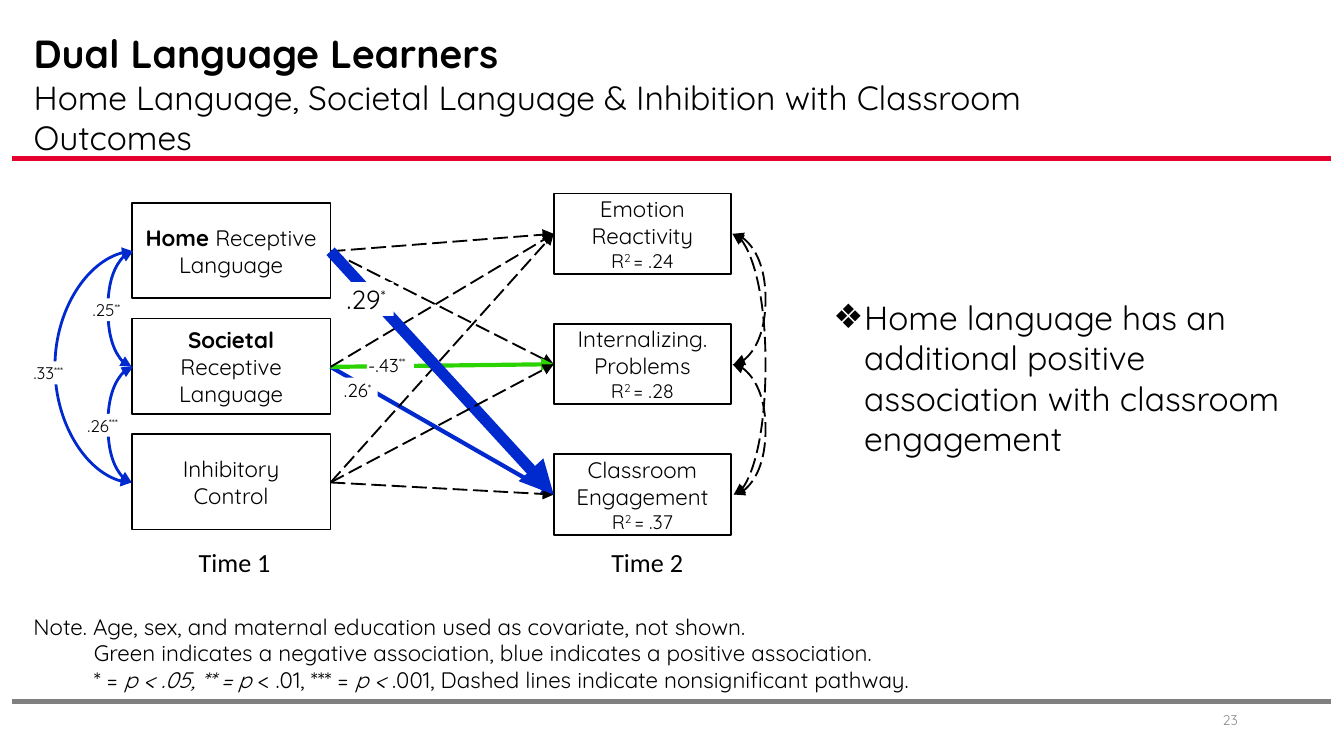
from pptx import Presentation, util as u
from pptx.dml.color import RGBColor
from pptx.enum import dml, shapes, text
from pptx.oxml.ns import qn
from lxml import etree

PX = 9144  # 100 px to the inch
FONT = "Quicksand"
INK = {"black": "000000", "white": "FFFFFF", "red": "E6002E", "gray": "808080",
       "pale": "8C8C8C", "blue": "0029CE", "green": "2BD300"}
LEFT = [187 + 86 * i for i in range(3)]
RIGHT = [174 + 97 * i for i in range(3)]
EDGE = {"in": 98, "out": 246, "to": 412, "end": 545}
CAUSES = [
    [("Home", "b"), (" Receptive Language", "")],
    [("Societal", "b"), (" Receptive Language", "")],
    [("Inhibitory Control", "")],
]
RESULTS = [("Emotion Reactivity", ".24"), ("Internalizing. Problems", ".28"),
           ("Classroom Engagement", ".37")]
# cause, result, colour, width, dashed
PATHS = [
    (1, 2, "blue", 2.25, False), (2, 2, "black", 1, True),
    (2, 0, "black", 1, True), (0, 0, "black", 1, True),
    (0, 1, "black", 1, True), (1, 1, "green", 2.25, False),
    (1, 0, "black", 1, True), (0, 2, "blue", 6, False),
    (2, 1, "black", 1, True),
]
# value, stars, size, place
LABELS = [
    (".33", "***", 9, (24, 269, 31, 17)), (".26", "***", 9, (64, 308, 31, 17)),
    (".25", "**", 9, (68, 222, 28, 17)), (".26", "*", 10, (255, 281, 26, 19)),
    (".29", "*", 14, (257, 210, 36, 25)), ("-.43", "**", 10, (273, 262, 35, 19)),
]
NOTE = [
    [("Note. Age, sex, and maternal education used as covariate, not shown.", "")],
    [("Green indicates a negative association, blue indicates a positive association.", "")],
    [("* = ", ""), ("p < .05, ** = p", "i"), (" < .01, *** = ", ""), ("p <", "i"),
     (" .001, Dashed lines indicate nonsignificant pathway.", "")],
]


def rgb(name):
    return RGBColor.from_string(INK[name])


def emu(*nums):
    return [n * PX for n in nums]


def place(shape, box):
    shape.left, shape.top, shape.width, shape.height = emu(*box)


def write(para, runs, size, color="black", font=FONT, align=text.PP_ALIGN.LEFT):
    """Fill a paragraph with (words, style) runs; style is b, i, sup or empty."""
    para.alignment = align
    para.space_before = u.Pt(0)
    para.font.size, para.font.name = u.Pt(size), font
    para.font.color.rgb = rgb(color)
    for words, style in runs:
        run = para.add_run()
        run.text = words
        if style == "b":
            run.font.bold = True
        elif style == "i":
            run.font.italic = True
        elif style == "sup":
            run.font._element.set("baseline", "30000")


def add_text(slide, box, wrap=True):
    shape = slide.shapes.add_textbox(*emu(*box))
    shape.text_frame.word_wrap = wrap
    return shape


def add_box(slide, box):
    shape = slide.shapes.add_shape(shapes.MSO_SHAPE.RECTANGLE, *emu(*box))
    shape.shadow.inherit = False
    shape.fill.solid()
    shape.fill.fore_color.rgb = rgb("white")
    shape.line.color.rgb = rgb("black")
    shape.line.width = u.Pt(1)
    frame = shape.text_frame
    frame.word_wrap = True
    frame.vertical_anchor = text.MSO_ANCHOR.MIDDLE
    return frame


def add_line(slide, ends, color, width, dash=False, tips=(), bend=0):
    """Join two points; bend is how far a curve swings out, in px."""
    kind = shapes.MSO_CONNECTOR.CURVE if bend else shapes.MSO_CONNECTOR.STRAIGHT
    line = slide.shapes.add_connector(kind, *emu(*ends))
    line.line.color.rgb = rgb(color)
    line.line.width = u.Pt(width)
    if dash:
        line.line.dash_style = dml.MSO_LINE.LONG_DASH
    props = line._element.spPr
    for tip in tips:
        etree.SubElement(props.find(qn("a:ln")), qn("a:" + tip), type="triangle")
    etree.SubElement(props, qn("a:effectLst"))
    if bend:
        span = abs(ends[2] - ends[0])
        guide = props.find(qn("a:prstGeom")).get_or_add_avLst()
        etree.SubElement(guide, qn("a:gd"), name="adj1",
                         fmla=f"val {bend * 100000 // span}")


def add_label(slide, value, stars, size, box):
    shape = add_text(slide, box, wrap=False)
    shape.fill.solid()
    shape.fill.fore_color.rgb = rgb("white")
    frame = shape.text_frame
    frame.margin_left = frame.margin_right = PX
    frame.margin_top = frame.margin_bottom = PX
    write(frame.paragraphs[0], [(value, ""), (stars, "sup")], size)


def fill_title(slide):
    title = slide.shapes.title
    place(title, (15, 17, 872, 106))
    frame = title.text_frame
    frame.auto_size = text.MSO_AUTO_SIZE.NONE
    frame.vertical_anchor = text.MSO_ANCHOR.TOP
    write(frame.paragraphs[0], [("Dual Language Learners", "b")], 21)
    write(frame.add_paragraph(), [(
        "Home Language, Societal Language & Inhibition with Classroom Outcomes", "")], 18)


def fill_body(slide):
    body = slide.placeholders[1]
    place(body, (604, 216, 369, 131))
    frame = body.text_frame
    frame.auto_size = text.MSO_AUTO_SIZE.NONE
    para = frame.paragraphs[0]
    props = para._p.get_or_add_pPr()
    props.set("marL", str(29 * PX))
    props.set("indent", str(-23 * PX))
    etree.SubElement(props, qn("a:buChar"), char="❖")
    write(para, [("Home language has an additional positive association "
                  "with classroom engagement", "")], 18)


def add_model(slide):
    mid = text.PP_ALIGN.CENTER
    for y, runs in zip(LEFT, CAUSES):
        frame = add_box(slide, (EDGE["in"], y - 36, 148, 71))
        write(frame.paragraphs[0], runs, 12, align=mid)
    for y, (name, fit) in zip(RIGHT, RESULTS):
        frame = add_box(slide, (EDGE["to"], y - 30, 132, 60))
        write(frame.paragraphs[0], [(name, "")], 12, align=mid)
        write(frame.add_paragraph(), [("R", ""), ("2 ", "sup"), ("= " + fit, "")],
              10.5, align=mid)
    for a, b, color, width, dash in PATHS:
        add_line(slide, (EDGE["out"], LEFT[a], EDGE["to"], RIGHT[b]),
                 color, width, dash, ["tailEnd"])
    both = ["headEnd", "tailEnd"]
    for a, b, bend in [(0, 2, 59), (1, 2, 19), (0, 1, 19)]:
        x = EDGE["in"]
        add_line(slide, (x + 1, LEFT[a], x, LEFT[b]), "blue", 1.5, False, both, bend)
    for a, b in [(0, 2), (0, 1), (1, 2)]:
        x = EDGE["end"]
        add_line(slide, (x, RIGHT[a], x + 1, RIGHT[b]), "black", 1, True, both, 25)
    for label in LABELS:
        add_label(slide, *label)
    for x, name in [(138, "Time 1"), (445, "Time 2")]:
        shape = add_text(slide, (x, 402, 74, 34), wrap=False)
        write(shape.text_frame.paragraphs[0], [(name, "")], 14, font="Calibri")


def add_note(slide):
    frame = add_text(slide, (15, 451, 951, 71)).text_frame
    for i, runs in enumerate(NOTE):
        para = frame.add_paragraph() if i else frame.paragraphs[0]
        if i:
            para._p.get_or_add_pPr().set("marL", str(45 * PX))
        write(para, runs, 12)


def add_number(slide):
    frame = add_text(slide, (706, 521, 225, 30)).text_frame
    frame.vertical_anchor = text.MSO_ANCHOR.MIDDLE
    write(frame.paragraphs[0], [("23", "")], 7.5, "pale", align=text.PP_ALIGN.RIGHT)


def main():
    deck = Presentation()
    deck.slide_width = 1000 * PX
    deck.slide_height = deck.slide_width * 9 // 16
    slide = deck.slides.add_slide(deck.slide_layouts[1])
    fill_title(slide)
    fill_body(slide)
    for y, color in [(118, "red"), (522, "gray")]:
        add_line(slide, (9, y, 990, y), color, 3)
    add_model(slide)
    add_note(slide)
    add_number(slide)
    deck.save("out.pptx")


if __name__ == "__main__":
    main()
